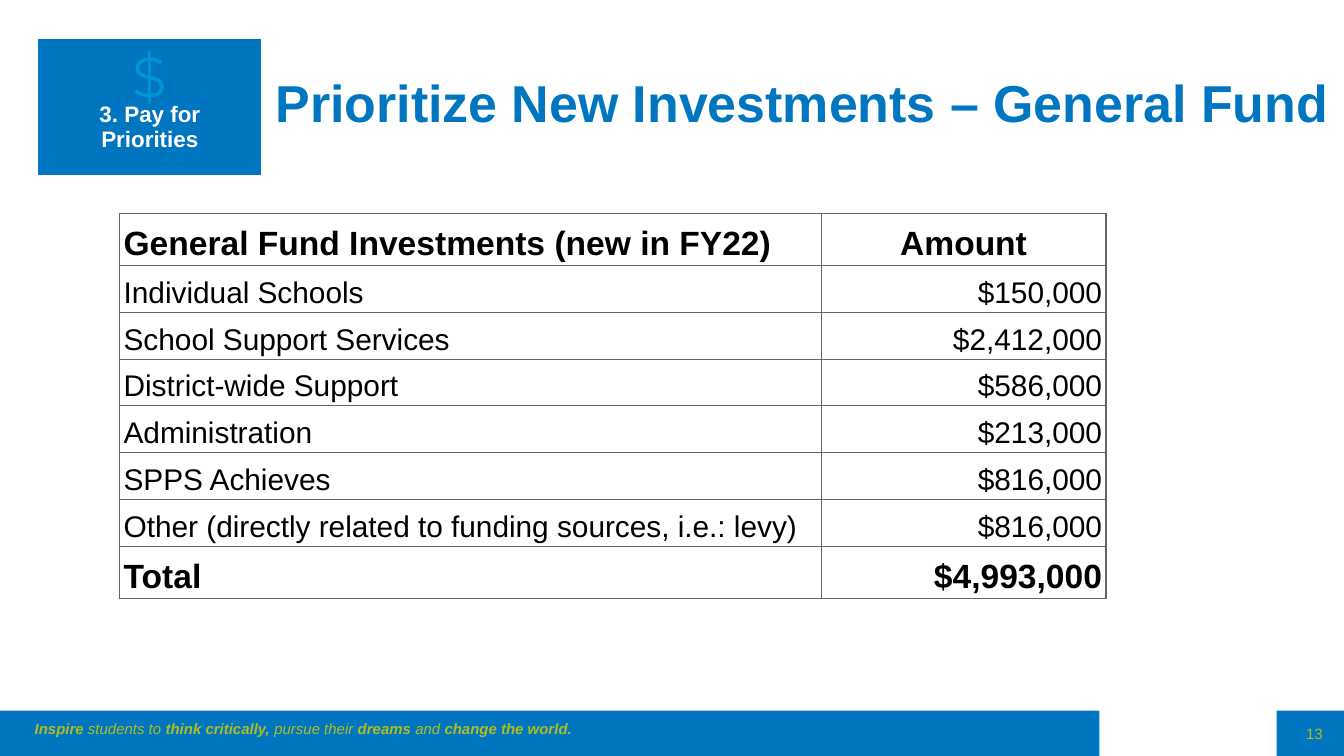
import pptx
import pptx.util
import pptx.dml.color
import pptx.enum.shapes
import pptx.enum.text
import pptx.oxml

WIDE = pptx.util.Inches(10)
HIGH = pptx.util.Inches(5.625)
INK = {"blue": "0076C0", "sky": "0194D3", "lime": "B0BC22",
       "white": "FFFFFF", "black": "000000", "grey": "666666"}
ALIGN = pptx.enum.text.PP_ALIGN
ANCHOR = pptx.enum.text.MSO_ANCHOR

MOTTO = [("Inspire", True), (" students to ", False),
         ("think critically,", True), (" pursue their ", False),
         ("dreams", True), (" and ", False),
         ("change the world.", True)]
FUNDS = [("General Fund Investments (new in FY22)", "Amount"),
         ("Individual Schools", "$150,000"),
         ("School Support Services", "$2,412,000"),
         ("District-wide Support", "$586,000"),
         ("Administration", "$213,000"),
         ("SPPS Achieves", "$816,000"),
         ("Other (directly related to funding sources, i.e.: levy)", "$816,000"),
         ("Total", "$4,993,000")]


def color(name):
    return pptx.dml.color.RGBColor.from_string(INK[name])


def across(share):
    return int(WIDE * share / 100)


def down(share):
    return int(HIGH * share / 100)


def place(left, top, width, height):
    return across(left), down(top), across(width), down(height)


def style(para, size, ink, bold=False, align=ALIGN.LEFT, face="Arial"):
    para.alignment = align
    font = para.font
    font.name, font.size, font.bold = face, pptx.util.Pt(size), bold
    font.color.rgb = color(ink)


def pad(frame, inset=0.1):
    for side in ("left", "top", "right", "bottom"):
        setattr(frame, f"margin_{side}", pptx.util.Inches(inset))


def add_bar(slide, area, ink):
    bar = slide.shapes.add_shape(
        pptx.enum.shapes.MSO_SHAPE.RECTANGLE, *place(*area))
    bar.shadow.inherit = False
    bar.fill.solid()
    bar.fill.fore_color.rgb = color(ink)
    bar.line.fill.background()


def add_label(slide, area, text, size, ink, anchor=ANCHOR.TOP, **look):
    frame = slide.shapes.add_textbox(*place(*area)).text_frame
    frame.word_wrap = True
    frame.vertical_anchor = anchor
    pad(frame)
    para = frame.paragraphs[0]
    para.text = text
    style(para, size, ink, **look)
    return para


def add_title(slide, area, text):
    title = slide.shapes.title
    title.left, title.top, title.width, title.height = place(*area)
    frame = title.text_frame
    frame.text = text
    frame.word_wrap = True
    frame.auto_size = pptx.enum.text.MSO_AUTO_SIZE.NONE
    frame.vertical_anchor = ANCHOR.TOP
    pad(frame)
    style(frame.paragraphs[0], 27.8, "blue", True)


def add_grid(slide, left, top, cols, rows):
    area = place(left, top, sum(cols), sum(rows))
    table = slide.shapes.add_table(len(rows), len(cols), *area).table
    table.first_row = table.horz_banding = False
    for col, width in zip(table.columns, cols):
        col.width = across(width)
    for row, height in zip(table.rows, rows):
        row.height = down(height)
    return table


def edge(cell, ink):
    props = cell._tc.get_or_add_tcPr()
    for side in "LRTB":
        props.append(pptx.oxml.parse_xml(
            f'<a:ln{side} xmlns:a="http://schemas.openxmlformats.org/'
            f'drawingml/2006/main" w="9525"><a:solidFill>'
            f'<a:srgbClr val="{INK[ink]}"/></a:solidFill></a:ln{side}>'))


def add_badge(slide):
    cell = add_grid(slide, 2.9, 5.2, [16.5], [17.9]).cell(0, 0)
    edge(cell, "blue")
    cell.fill.solid()
    cell.fill.fore_color.rgb = color("blue")
    pad(cell)
    cell.margin_top = pptx.util.Inches(0.47)
    cell.text = "3. Pay for\nPriorities"
    for para in cell.text_frame.paragraphs:
        style(para, 12, "white", True, ALIGN.CENTER)
    add_label(slide, (3, 3.7, 16.3, 10.7), "$", 30, "sky",
              align=ALIGN.CENTER, face="Montserrat")


def add_funds(slide):
    last = len(FUNDS) - 1
    rows = [6.93 if r in (0, last) else 6.19 for r in range(len(FUNDS))]
    table = add_grid(slide, 8.9, 28.2, [52.2, 21.2], rows)
    for r, texts in enumerate(FUNDS):
        strong = r in (0, last)
        amount = ALIGN.RIGHT if r else ALIGN.CENTER
        for c, text in enumerate(texts):
            cell = table.cell(r, c)
            edge(cell, "grey")
            cell.fill.background()
            pad(cell, 0.02)
            cell.margin_left = cell.margin_right = pptx.util.Inches(0.03)
            cell.vertical_anchor = ANCHOR.BOTTOM
            cell.text = text
            para = cell.text_frame.paragraphs[0]
            para.line_spacing = 1 if (r, c) == (last, 0) else 1.15
            style(para, 18 if strong else 16, "black", strong,
                  amount if c else ALIGN.LEFT)


def add_foot(slide):
    add_bar(slide, (0, 94, 100, 6), "blue")
    add_bar(slide, (81.8, 87.7, 13.2, 12.3), "white")
    para = add_label(slide, (1.6, 94, 46.6, 4.4), "", 8, "lime")
    para.font.italic = True
    for text, bold in MOTTO:
        run = para.add_run()
        run.text = text
        run.font.bold = bold
    add_label(slide, (96.2, 94.4, 3.8, 5.3), "13", 8, "lime", ANCHOR.MIDDLE)


def main():
    deck = pptx.Presentation()
    deck.slide_width, deck.slide_height = WIDE, HIGH
    slide = deck.slides.add_slide(deck.slide_layouts[5])
    add_foot(slide)
    add_badge(slide)
    add_title(slide, (19.5, 7.6, 80.5, 11.7),
              "Prioritize New Investments – General Fund")
    add_funds(slide)
    deck.save("out.pptx")


if __name__ == "__main__":
    main()
